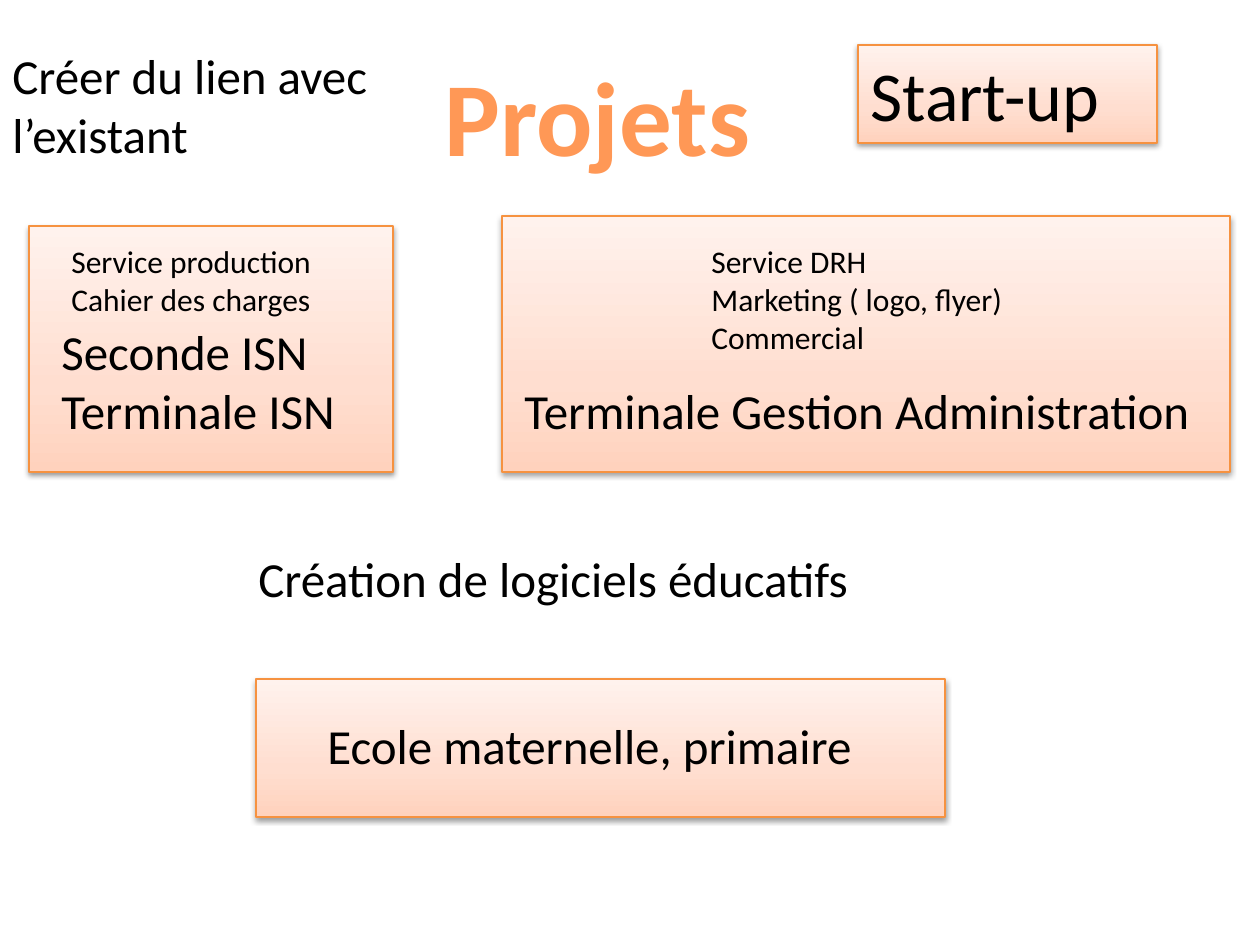
from lxml import etree
from pptx import Presentation
from pptx.dml.color import RGBColor
from pptx.enum.shapes import MSO_SHAPE
from pptx.enum.text import MSO_ANCHOR, PP_ALIGN
from pptx.oxml import parse_xml
from pptx.oxml.ns import nsdecls
from pptx.util import Emu, Pt

PX = 914400 / 126
FONT = "Calibri"
COLORS = {"text": "000000", "title": "FF9856", "border": "F69240", "shadow": "000000"}
PANEL_STOPS = [(0, "FFD2BD"), (35, "FFDED0"), (100, "FFF2ED")]

# (left, top, width, height) in px, from back to front
PANELS = [
    (256, 679, 689, 138),
    (502, 216, 728, 256),
    (29, 226, 364, 246),
]
STARTUP = ((858, 45, 299, 98), ["Start-up"], 40)
TITLE = ((432, 45, 334, 140), ["Projets"], 60)
# (box, paragraphs, size in points)
LABELS = [
    ((0, 39, 413, 131), ["Créer du lien avec l’existant"], 28),
    ((512, 374, 699, 72), ["Terminale Gestion Administration"], 28),
    ((49, 315, 344, 131), ["Seconde ISN", "Terminale ISN"], 28),
    ((315, 709, 601, 72), ["Ecole maternelle, primaire"], 28),
    ((246, 542, 679, 72), ["Création de logiciels éducatifs"], 28),
    ((59, 236, 276, 89), ["Service production", "Cahier des charges"], 18),
    ((699, 236, 354, 127), ["Service DRH", "Marketing ( logo, flyer)", "Commercial"], 18),
]


def emu(box):
    return [Emu(round(v * PX)) for v in box]


def write(sp, lines, size, color="text", bold=False, wrap=True):
    tf = sp.text_frame
    tf.word_wrap = wrap
    tf.vertical_anchor = MSO_ANCHOR.TOP
    for i, line in enumerate(lines):
        p = tf.add_paragraph() if i else tf.paragraphs[0]
        p.text = line
        p.alignment = PP_ALIGN.LEFT
        p.font.name = FONT
        p.font.size = Pt(size)
        p.font.bold = bold
        p.font.color.rgb = RGBColor.from_string(COLORS[color])


def add_panel(s, box):
    """Add a rectangle with an upward gradient and a soft shadow below."""
    sp = s.shapes.add_shape(MSO_SHAPE.RECTANGLE, *emu(box))
    sp.line.color.rgb = RGBColor.from_string(COLORS["border"])
    sp.line.width = Pt(0.75)
    sp.fill.gradient()
    sp.fill.gradient_angle = 90
    stops = sp.fill._xPr.find(".//{*}gsLst")
    for old in list(stops):
        stops.remove(old)
    for pos, color in PANEL_STOPS:
        stops.append(parse_xml(
            f'<a:gs {nsdecls("a")} pos="{pos * 1000}"><a:srgbClr val="{color}"/></a:gs>'))
    sp.shadow.inherit = False
    effects = sp._element.spPr.find("{*}effectLst")
    effects.append(etree.fromstring(
        f'<a:outerShdw {nsdecls("a")} blurRad="40000" dist="20000" dir="5400000" '
        f'rotWithShape="0"><a:srgbClr val="{COLORS["shadow"]}">'
        '<a:alpha val="38000"/></a:srgbClr></a:outerShdw>'))
    return sp


def main():
    prs = Presentation()
    prs.slide_width, prs.slide_height = emu((1260, 945))
    s = prs.slides.add_slide(prs.slide_layouts[6])

    for box in PANELS:
        add_panel(s, box)
    box, lines, size = STARTUP
    write(add_panel(s, box), lines, size)

    box, lines, size = TITLE
    write(s.shapes.add_textbox(*emu(box)), lines, size, "title", bold=True, wrap=False)
    for box, lines, size in LABELS:
        write(s.shapes.add_textbox(*emu(box)), lines, size)

    prs.save("out.pptx")


if __name__ == "__main__":
    main()
